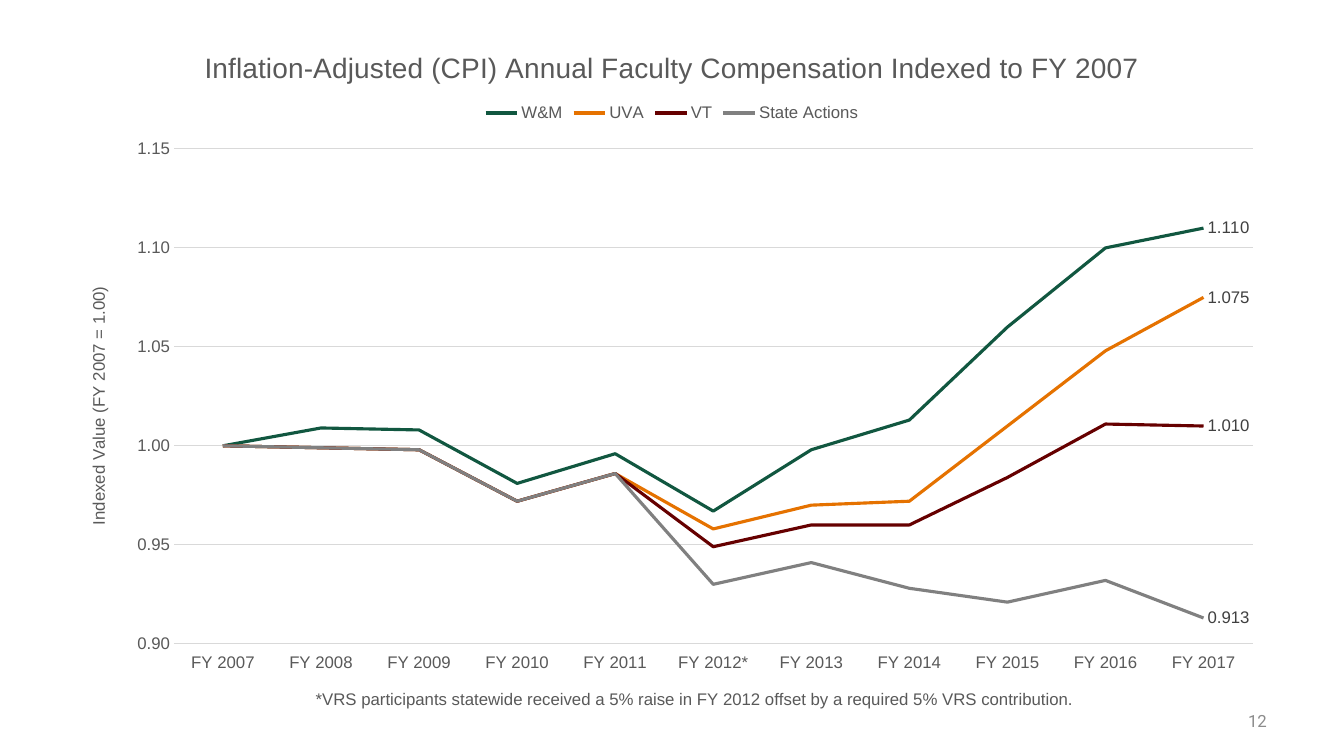
import pptx
import pptx.chart.data
import pptx.dml.color
import pptx.enum.chart
import pptx.enum.text
import pptx.util

SLIDE_WIDTH = pptx.util.Inches(13.33)
SLIDE_HEIGHT = pptx.util.Inches(7.5)

COLORS = {
    "text": "595959",
    "label": "404040",
    "grid": "D9D9D9",
    "page": "8C8C8C",
    "W&M": "115740",
    "UVA": "E57200",
    "VT": "660000",
    "State Actions": "808080",
}

YEARS = ["FY 2012*" if year == 2012 else f"FY {year}" for year in range(2007, 2018)]
SHARED_START = [1, 0.999, 0.998, 0.972, 0.986]
COMPENSATION = {
    "W&M": [1, 1.009, 1.008, 0.981, 0.996, 0.967, 0.998, 1.013, 1.06, 1.1, 1.11],
    "UVA": SHARED_START + [0.958, 0.97, 0.972, 1.01, 1.048, 1.075],
    "VT": SHARED_START + [0.949, 0.96, 0.96, 0.984, 1.011, 1.01],
    "State Actions": SHARED_START + [0.93, 0.941, 0.928, 0.921, 0.932, 0.913],
}


def share_box(left, top, width, height):
    return (
        round(left * SLIDE_WIDTH),
        round(top * SLIDE_HEIGHT),
        round(width * SLIDE_WIDTH),
        round(height * SLIDE_HEIGHT),
    )


def set_attributes(target, values):
    for name, value in values.items():
        setattr(target, name, value)


def style_font(font, color, size=12, name="Arial"):
    set_attributes(font, {"name": name, "size": pptx.util.Pt(size), "bold": False})
    font.color.rgb = pptx.dml.color.RGBColor.from_string(COLORS[color])


def style_line(line, color, width):
    line.color.rgb = pptx.dml.color.RGBColor.from_string(COLORS[color])
    line.width = pptx.util.Pt(width)


def add_title(owner, text, size=12):
    owner.has_title = True
    paragraph = owner_title(owner).text_frame.paragraphs[0]
    run = paragraph.add_run()
    run.text = text
    style_font(run.font, "text", size)


def owner_title(owner):
    return owner.chart_title if hasattr(owner, "chart_title") else owner.axis_title


def add_page_number(slide, number):
    frame = slide.shapes.add_textbox(*share_box(0.717, 0.927, 0.233, 0.053)).text_frame
    set_attributes(frame, {
        "word_wrap": True,
        "vertical_anchor": pptx.enum.text.MSO_ANCHOR.MIDDLE,
    })
    paragraph = frame.paragraphs[0]
    paragraph.alignment = pptx.enum.text.PP_ALIGN.RIGHT
    run = paragraph.add_run()
    run.text = str(number)
    style_font(run.font, "page", name="Roboto")


def style_axis(axis, title):
    tick_mark = pptx.enum.chart.XL_TICK_MARK.NONE
    set_attributes(axis, {"major_tick_mark": tick_mark, "minor_tick_mark": tick_mark})
    style_font(axis.tick_labels.font, "text")
    add_axis_title(axis, title)


def add_axis_title(axis, title):
    add_title(axis, title)


def style_series(series):
    series.smooth = False
    style_line(series.format.line, series.name, 2.25)
    label = series.points[len(YEARS) - 1].data_label
    style_font(label.font, "label")
    label.position = pptx.enum.chart.XL_LABEL_POSITION.RIGHT
    series.data_labels.show_value = False


def add_compensation_chart(slide):
    data = pptx.chart.data.CategoryChartData(number_format="0.000")
    data.categories = YEARS
    for name, values in COMPENSATION.items():
        data.add_series(name, values)
    chart = slide.shapes.add_chart(
        pptx.enum.chart.XL_CHART_TYPE.LINE, *share_box(0.05, 0.033, 0.9, 0.933), data
    ).chart
    style_font(chart.font, "text")
    add_title(
        chart,
        "Inflation-Adjusted (CPI) Annual Faculty Compensation Indexed to FY 2007",
        20,
    )

    chart.has_legend = True
    set_attributes(chart.legend, {
        "position": pptx.enum.chart.XL_LEGEND_POSITION.TOP,
        "include_in_layout": False,
    })
    style_font(chart.legend.font, "text")

    years = chart.category_axis
    style_axis(
        years,
        "*VRS participants statewide received a 5% raise in FY 2012 "
        "offset by a required 5% VRS contribution.",
    )
    years.tick_label_position = pptx.enum.chart.XL_TICK_LABEL_POSITION.LOW
    style_line(years.format.line, "grid", 0.75)

    index = chart.value_axis
    style_axis(index, "Indexed Value (FY 2007 = 1.00)")
    set_attributes(index, {
        "minimum_scale": 0.9,
        "maximum_scale": 1.15,
        "major_unit": 0.05,
        "has_major_gridlines": True,
    })
    set_attributes(index.tick_labels, {
        "number_format": "0.00",
        "number_format_is_linked": False,
    })
    index.format.line.fill.background()
    style_line(index.major_gridlines.format.line, "grid", 0.75)

    chart.plots[0].vary_by_categories = False
    for series in chart.plots[0].series:
        style_series(series)


def main():
    presentation = pptx.Presentation()
    set_attributes(presentation, {
        "slide_width": SLIDE_WIDTH,
        "slide_height": SLIDE_HEIGHT,
    })
    slide = presentation.slides.add_slide(presentation.slide_layouts[6])
    add_page_number(slide, 12)
    add_compensation_chart(slide)
    presentation.save("out.pptx")


if __name__ == "__main__":
    main()
